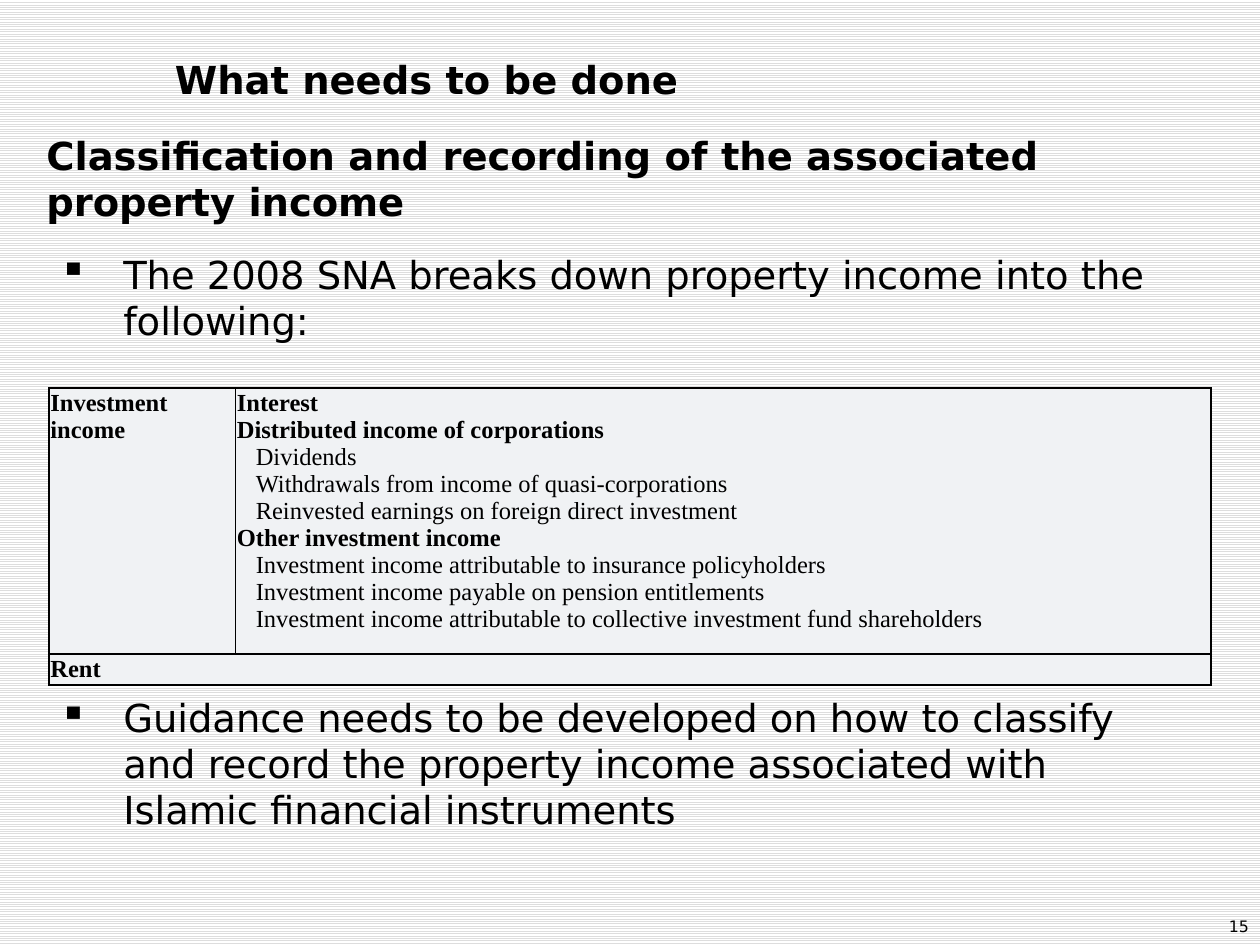
from dataclasses import dataclass

from lxml import etree
from pptx import Presentation
from pptx.dml.color import RGBColor
from pptx.enum.dml import MSO_PATTERN
from pptx.enum.text import MSO_ANCHOR, PP_ALIGN
from pptx.oxml.ns import qn
from pptx.util import Inches, Pt

TOP, MIDDLE, BOTTOM = MSO_ANCHOR.TOP, MSO_ANCHOR.MIDDLE, MSO_ANCHOR.BOTTOM
LEFT, RIGHT = PP_ALIGN.LEFT, PP_ALIGN.RIGHT

TITLE = "What needs to be done"
HEADING = "Classification and recording of the associated property income"
# Top edge and wording of each bullet
BULLETS = [
    (1.94, 1.0, "The 2008 SNA breaks down property income into the following:"),
    (5.46, 1.4, "Guidance needs to be developed on how to classify and record "
                "the property income associated with Islamic financial instruments"),
]
PAGE_NUMBER = "15"

# Each category with the entries below it
INCOME_TYPES = [
    ("Interest", []),
    ("Distributed income of corporations", [
        "Dividends",
        "Withdrawals from income of quasi-corporations",
        "Reinvested earnings on foreign direct investment",
    ]),
    ("Other investment income", [
        "Investment income attributable to insurance policyholders",
        "Investment income payable on pension entitlements",
        "Investment income attributable to collective investment fund shareholders",
    ]),
]
COLUMN_WIDTHS = [1.48, 7.74]
ROW_HEIGHTS = [1.94, 0.22]


@dataclass(frozen=True)
class Theme:
    font: str = "DejaVu Sans"
    table_font: str = "Times New Roman"
    text_size: int = 22
    table_size: int = 14
    number_size: int = 9
    ink: str = "000000"
    stripe: str = "DDDDDD"
    paper: str = "FFFFFF"
    cell: str = "F0F2F4"
    bullet_indent: float = 0.51
    entry_indent: float = 0.15


THEME = Theme()


def style(paragraph, font, size, bold):
    for run in paragraph.runs:
        run.font.name = font
        run.font.size = Pt(size)
        run.font.bold = bold
        run.font.color.rgb = RGBColor.from_string(THEME.ink)


def add_text(slide, box, text, size=THEME.text_size, bold=False, anchor=TOP, align=LEFT):
    frame = slide.shapes.add_textbox(*map(Inches, box)).text_frame
    frame.word_wrap = True
    frame.vertical_anchor = anchor
    paragraph = frame.paragraphs[0]
    paragraph.text = text
    paragraph.alignment = align
    style(paragraph, THEME.font, size, bold)
    return paragraph


def add_bullet(paragraph):
    properties = paragraph._p.get_or_add_pPr()
    indent = Inches(THEME.bullet_indent)
    properties.set("marL", str(indent))
    properties.set("indent", str(-indent))
    colour = etree.SubElement(properties, qn("a:buClr"))
    etree.SubElement(colour, qn("a:srgbClr"), val=THEME.ink)
    etree.SubElement(properties, qn("a:buChar"), char="▪")


def format_cell(cell, sides):
    """Draw the named sides (of L, R, T, B), clear the others and fill the cell."""
    properties = cell._tc.get_or_add_tcPr()
    for side in "LRTB":
        line = etree.SubElement(properties, qn(f"a:ln{side}"), w=str(Pt(1)))
        if side in sides:
            fill = etree.SubElement(line, qn("a:solidFill"))
            etree.SubElement(fill, qn("a:srgbClr"), val=THEME.ink)
        else:
            etree.SubElement(line, qn("a:noFill"))
    cell.fill.solid()
    cell.fill.fore_color.rgb = RGBColor.from_string(THEME.cell)
    cell.margin_left = cell.margin_right = cell.margin_top = Inches(0.01)
    cell.margin_bottom = 0


def write_cell(cell, lines):
    """Write (text, is_entry) lines; entries are indented and not bold."""
    cell.text_frame.text = "\n".join(text for text, _ in lines)
    for paragraph, (_, is_entry) in zip(cell.text_frame.paragraphs, lines):
        style(paragraph, THEME.table_font, THEME.table_size, not is_entry)
        if is_entry:
            paragraph._p.get_or_add_pPr().set("marL", str(Inches(THEME.entry_indent)))


def add_income_table(slide):
    size = map(Inches, (0.39, 3.08, sum(COLUMN_WIDTHS), sum(ROW_HEIGHTS)))
    table = slide.shapes.add_table(len(ROW_HEIGHTS), len(COLUMN_WIDTHS), *size).table
    table.first_row = table.horz_banding = False
    for column, width in zip(table.columns, COLUMN_WIDTHS):
        column.width = Inches(width)
    for row, height in zip(table.rows, ROW_HEIGHTS):
        row.height = Inches(height)

    income_lines = []
    for category, entries in INCOME_TYPES:
        income_lines.append((category, False))
        income_lines += [(entry, True) for entry in entries]
    write_cell(table.cell(0, 0), [("Investment income", False)])
    write_cell(table.cell(0, 1), income_lines)
    write_cell(table.cell(1, 0), [("Rent", False)])
    # The empty cell must not stretch its row
    empty = table.cell(1, 1).text_frame.paragraphs[0]
    etree.SubElement(empty._p, qn("a:endParaRPr"), sz=str(THEME.table_size * 100))

    for cell, sides in zip(table.iter_cells(), ("LRTB", "LRTB", "LTB", "RTB")):
        format_cell(cell, sides)


def main():
    deck = Presentation()
    deck.slide_width, deck.slide_height = Inches(10), Inches(7.5)
    slide = deck.slides.add_slide(deck.slide_layouts[6])

    background = slide.background.fill
    background.patterned()
    background.pattern = MSO_PATTERN.LIGHT_HORIZONTAL
    background.fore_color.rgb = RGBColor.from_string(THEME.stripe)
    background.back_color.rgb = RGBColor.from_string(THEME.paper)

    add_text(slide, (1.29, -0.38, 8.79, 1.24), TITLE, bold=True, anchor=BOTTOM)
    add_text(slide, (0.27, 1, 9.42, 0.85), HEADING, bold=True)
    for top, height, text in BULLETS:
        add_bullet(add_text(slide, (0.37, top, 8.98, height), text))
    add_income_table(slide)
    add_text(slide, (7.68, 7.15, 2.33, 0.4), PAGE_NUMBER, THEME.number_size,
             anchor=MIDDLE, align=RIGHT)
    deck.save("out.pptx")


if __name__ == "__main__":
    main()
